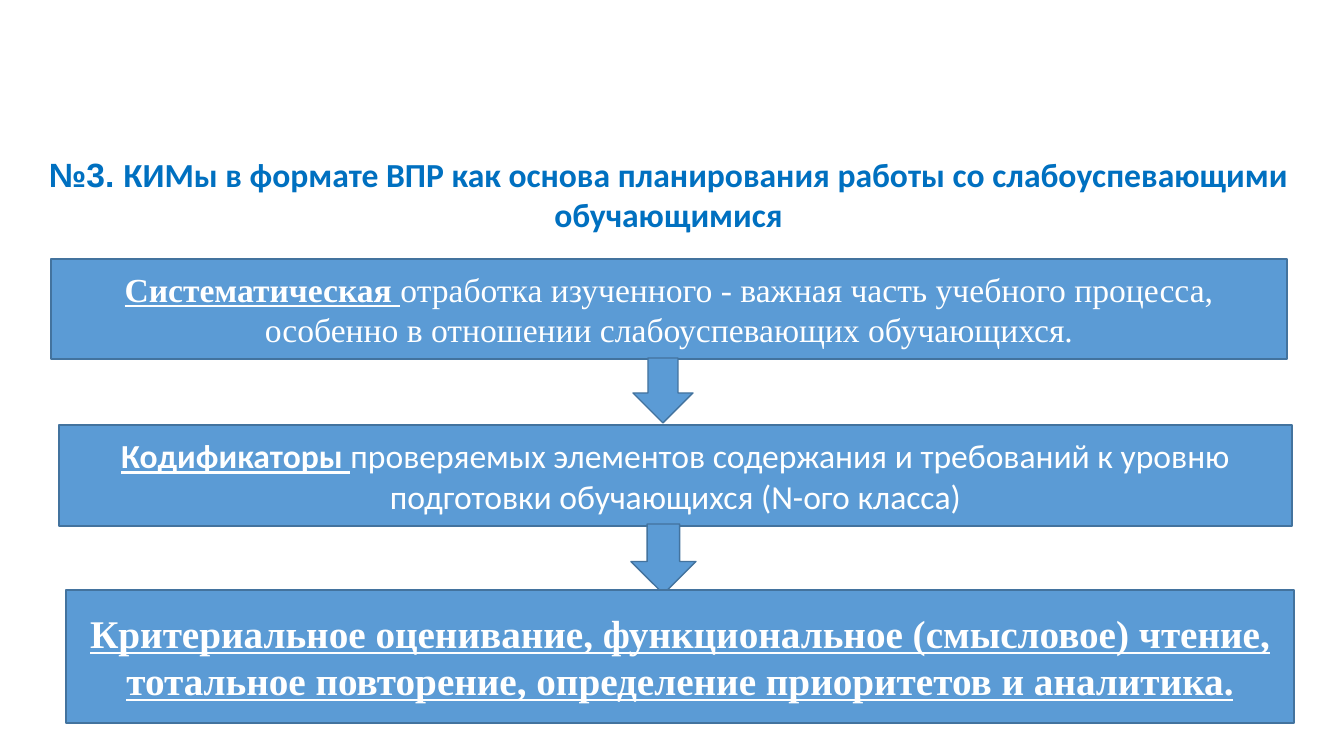
from pptx import Presentation
from pptx.dml.color import RGBColor
from pptx.enum.shapes import MSO_SHAPE
from pptx.enum.text import MSO_ANCHOR, PP_ALIGN
from pptx.util import Emu, Pt

TITLE_BLUE = RGBColor(0x00, 0x70, 0xC0)
STEP_FILL = RGBColor(0x5B, 0x9B, 0xD5)
STEP_LINE = RGBColor(0x43, 0x73, 0x9E)
WHITE = RGBColor(0xFF, 0xFF, 0xFF)

# Places are left, top, width, height in px.
SLIDE_SIZE = (1344, 756)
TITLE_PLACE = (29, 149, 1279, 132)
# Text pieces: wording, font, bold, underline.
TITLE = [
    ("№3. ", "Arial", True, False),
    ("КИМы в формате ВПР как основа планирования работы со слабоуспевающими обучающимися",
     "Calibri", True, False),
]
# Steps from top to bottom: place, text size, text pieces, place of the arrow below.
STEPS = [
    ((51, 259, 1236, 100), 24, [
        ("Систематическая ", "Times New Roman", True, True),
        ("отработка изученного - важная часть учебного процесса, "
         "особенно в отношении слабоуспевающих обучающихся.",
         "Times New Roman", False, False),
    ], (633, 358, 60, 65)),
    ((59, 425, 1233, 101), 24, [
        ("Кодификаторы ", "Calibri", True, True),
        ("проверяемых элементов содержания и требований к уровню "
         "подготовки обучающихся (N-ого класса)", "Calibri", False, False),
    ], (631, 524, 65, 70)),
    ((66, 590, 1228, 133), 28, [
        ("Критериальное оценивание, функциональное (смысловое) чтение, "
         "тотальное повторение, определение приоритетов и аналитика.",
         "Times New Roman", True, True),
    ], None),
]


def px(length):
    return Emu(round(length * 914400 / 100.8))


def write(frame, pieces, size, color, anchor):
    frame.word_wrap = True
    frame.vertical_anchor = anchor
    paragraph = frame.paragraphs[0]
    paragraph.alignment = PP_ALIGN.CENTER
    for wording, font_name, bold, underline in pieces:
        run = paragraph.add_run()
        run.text = wording
        run.font.name = font_name
        run.font.size = Pt(size)
        run.font.bold = bold
        run.font.underline = underline
        run.font.color.rgb = color


def add_block(slide, preset, place):
    """Add a filled and outlined preset shape."""
    block = slide.shapes.add_shape(preset, *map(px, place))
    block.shadow.inherit = False
    block.fill.solid()
    block.fill.fore_color.rgb = STEP_FILL
    block.line.color.rgb = STEP_LINE
    block.line.width = Pt(1)
    return block


def main():
    deck = Presentation()
    deck.slide_width, deck.slide_height = map(px, SLIDE_SIZE)
    slide = deck.slides.add_slide(deck.slide_layouts[6])

    title = slide.shapes.add_textbox(*map(px, TITLE_PLACE))
    write(title.text_frame, TITLE, 24, TITLE_BLUE, MSO_ANCHOR.TOP)

    for place, size, pieces, arrow_place in STEPS:
        step = add_block(slide, MSO_SHAPE.RECTANGLE, place)
        write(step.text_frame, pieces, size, WHITE, MSO_ANCHOR.MIDDLE)
        if arrow_place:
            add_block(slide, MSO_SHAPE.DOWN_ARROW, arrow_place)

    deck.save("out.pptx")


if __name__ == "__main__":
    main()
